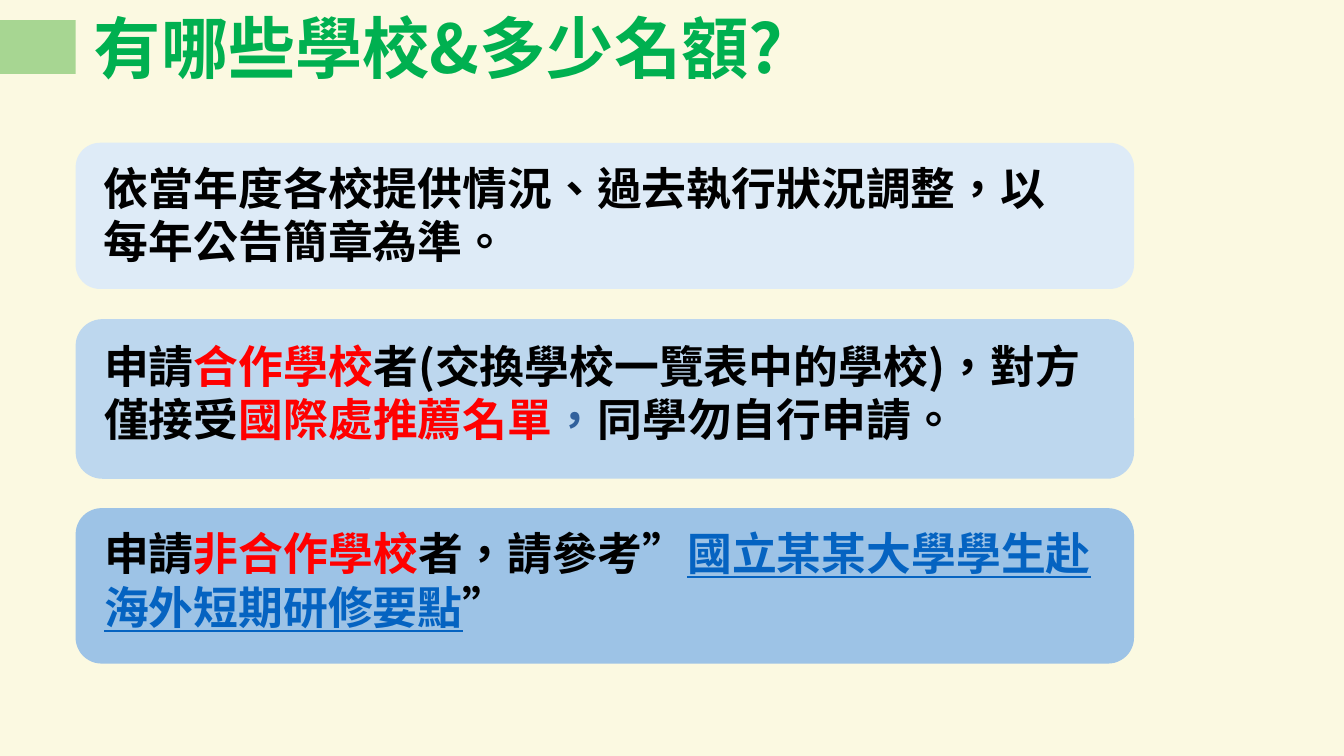
from dataclasses import dataclass

from lxml.etree import SubElement
from pptx import Presentation
from pptx.dml.color import RGBColor
from pptx.enum.shapes import MSO_SHAPE as Preset
from pptx.enum.text import MSO_AUTO_SIZE as AutoSize
from pptx.oxml.ns import qn
from pptx.slide import Slide
from pptx.util import Inches, Pt

WIDTH, HEIGHT = Inches(13.33), Inches(7.5)
COLUMNS, ROWS = 160, 90


@dataclass(frozen=True)
class Theme:
    font: str = "Noto Sans CJK SC"
    background: str = "FBF9E1"
    marker: str = "A7D692"
    cards: tuple[str, str, str] = ("DEEBF7", "BDD7EE", "9DC3E6")
    title: str = "00B050"
    ink: str = "000000"
    alert: str = "FF0000"
    comma: str = "32619C"
    link: str = "0563C1"
    title_size: int = 48
    body_size: int = 32


THEME = Theme()


@dataclass(frozen=True)
class Area:
    column: float
    row: float
    columns: float
    rows: float

    def lengths(self) -> tuple[int, int, int, int]:
        return (
            round(WIDTH * self.column / COLUMNS),
            round(HEIGHT * self.row / ROWS),
            round(WIDTH * self.columns / COLUMNS),
            round(HEIGHT * self.rows / ROWS),
        )


@dataclass(frozen=True)
class Span:
    text: str
    color: str = THEME.ink
    underline: bool = False


@dataclass(frozen=True)
class Card:
    row: float
    rows: float
    text_row: float
    text_columns: float
    spans: tuple[Span, ...]


CARDS = (
    Card(17, 17.4, 18.5, 119, (
        Span("依當年度各校提供情況、過去執行狀況調整，以每年公告簡章為準。"),
    )),
    Card(38, 19, 39.7, 120.5, (
        Span("申請"),
        Span("合作學校", THEME.alert),
        Span("者(交換學校一覽表中的學校)，對方僅接受"),
        Span("國際處推薦名單", THEME.alert),
        Span("，", THEME.comma),
        Span("同學勿自行申請。"),
    )),
    Card(60.5, 18.5, 62, 120.5, (
        Span("申請"),
        Span("非合作學校", THEME.alert),
        Span("者，請參考”"),
        Span("國立某某大學學生赴海外短期研修要點", THEME.link, True),
        Span("”"),
    )),
)


def add_block(page: Slide, preset: Preset, area: Area, fill: str) -> None:
    block = page.shapes.add_shape(preset, *area.lengths())
    block.shadow.inherit = False
    block.fill.solid()
    block.fill.fore_color.rgb = RGBColor.from_string(fill)
    block.line.fill.background()


def add_text(page: Slide, area: Area, spans: tuple[Span, ...], size: int) -> None:
    box = page.shapes.add_textbox(*area.lengths())
    frame = box.text_frame
    frame.word_wrap = True
    frame.auto_size = AutoSize.SHAPE_TO_FIT_TEXT
    para = frame.paragraphs[0]
    for span in spans:
        run = para.add_run()
        run.text = span.text
        font = run.font
        font.name = THEME.font
        font.size = Pt(size)
        font.bold = True
        font.underline = span.underline
        font.color.rgb = RGBColor.from_string(span.color)
        properties = run._r.get_or_add_rPr()
        properties.set("lang", "zh-TW")
        SubElement(properties, qn("a:ea"), typeface=THEME.font)


def main() -> None:
    deck = Presentation()
    deck.slide_width, deck.slide_height = WIDTH, HEIGHT
    page = deck.slides.add_slide(deck.slide_layouts[6])
    page.background.fill.solid()
    page.background.fill.fore_color.rgb = RGBColor.from_string(THEME.background)

    add_block(page, Preset.RECTANGLE, Area(0, 2.4, 9, 6.4), THEME.marker)
    title = Span("有哪些學校&多少名額?", THEME.title)
    add_text(page, Area(10, 0.2, 87.8, 10.9), (title,), THEME.title_size)

    for card, fill in zip(CARDS, THEME.cards):
        add_block(page, Preset.ROUNDED_RECTANGLE, Area(9, card.row, 126, card.rows), fill)
        text_area = Area(11.2, card.text_row, card.text_columns, 14.2)
        add_text(page, text_area, card.spans, THEME.body_size)

    deck.save("out.pptx")


if __name__ == "__main__":
    main()
